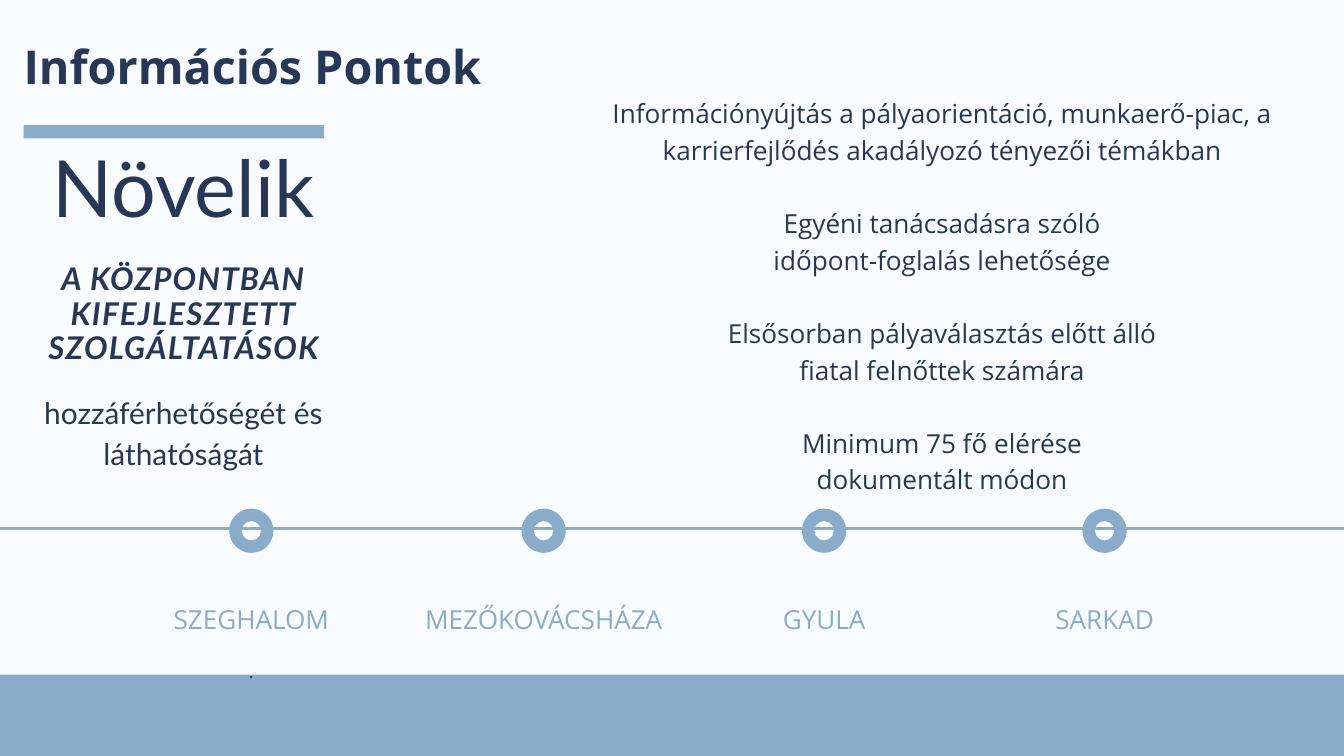
"""Builds the slide on the information points and their four towns."""
from dataclasses import dataclass

from lxml import etree
from pptx import Presentation
from pptx import util as u
from pptx.dml.color import RGBColor
from pptx.enum import shapes, text
from pptx.oxml.ns import qn


@dataclass(frozen=True)
class Style:
    font: str
    size: float
    leading: float
    color: RGBColor
    bold: bool = False
    italic: bool = False
    tracking: int = 0


class Theme:
    paper = RGBColor.from_string("F9FCFF")
    blue = RGBColor.from_string("8AABCA")
    navy = RGBColor.from_string("273755")
    title = Style("Open Sans", 50, 70, navy, bold=True)
    body = Style("Open Sans", 28, 39.2, navy)
    town = Style("Open Sans", 28, 39.2, blue)
    dot = Style("Open Sans", 19, 26.6, navy)
    verb = Style("Lato", 84.5, 84.5, navy)
    services = Style("Lato", 33.5, 36.8, navy, bold=True, italic=True, tracking=140)
    goal = Style("Lato", 32, 44.8, navy)


SERVICES = [
    ("Információnyújtás a pályaorientáció, munkaerő-piac, a",
     "karrierfejlődés akadályozó tényezői témákban"),
    ("Egyéni tanácsadásra szóló", "időpont-foglalás lehetősége"),
    ("Elsősorban pályaválasztás előtt álló", "fiatal felnőttek számára"),
    ("Minimum 75 fő elérése", "dokumentált módon"),
]
TOWNS = [("SZEGHALOM", 9.5), ("MEZŐKOVÁCSHÁZA", 20.55),
         ("GYULA", 31.15), ("SARKAD", 41.75)]
SIDE_TEXTS = [
    ("Növelik", Theme.verb, 5.84, 3.02),
    ("A KÖZPONTBAN KIFEJLESZTETT SZOLGÁLTATÁSOK", Theme.services, 9.93, 3.89),
    ("hozzáférhetőségét és láthatóságát", Theme.goal, 14.68, 3.02),
]
WIDTH, HEIGHT = 50.8, 28.58
TIMELINE_Y = 19.98
RING = 1.67


def box(*lengths):
    """Turn centimetre numbers into lengths."""
    return [u.Cm(length) for length in lengths]


def prepare_frame(frame):
    """Give a text frame no margins, wrapping and top alignment."""
    frame.margin_left = frame.margin_top = frame.margin_right = frame.margin_bottom = 0
    frame.word_wrap = True
    frame.auto_size = text.MSO_AUTO_SIZE.NONE
    frame.vertical_anchor = text.MSO_ANCHOR.TOP


def format_paragraph(paragraph, style, align=text.PP_ALIGN.CENTER, before=0):
    """Apply a theme style to a paragraph."""
    paragraph.alignment = align
    paragraph.line_spacing = u.Pt(style.leading)
    paragraph.space_before = u.Pt(before)
    font = paragraph.font
    font.name, font.size = style.font, u.Pt(style.size)
    font.bold, font.italic = style.bold, style.italic
    font.color.rgb = style.color
    if style.tracking:
        font._rPr.set("spc", str(style.tracking))


def add_label(slide, wording, style, left, top, width, height):
    """Add a centred text box."""
    frame = slide.shapes.add_textbox(*box(left, top, width, height)).text_frame
    prepare_frame(frame)
    frame.text = wording
    format_paragraph(frame.paragraphs[0], style)


def add_block(slide, preset, left, top, width, height):
    """Add a flat blue shape without outline."""
    block = slide.shapes.add_shape(preset, *box(left, top, width, height))
    block.shadow.inherit = False
    block.fill.solid()
    block.fill.fore_color.rgb = Theme.blue
    block.line.fill.background()
    return block


def add_timeline(slide):
    """Add the line with a ring and a label for every town."""
    line = slide.shapes.add_connector(
        shapes.MSO_CONNECTOR.STRAIGHT, *box(0, TIMELINE_Y, WIDTH, TIMELINE_Y))
    line.line.color.rgb = Theme.blue
    line.line.width = u.Pt(3.6)
    etree.SubElement(line._element.spPr, qn("a:effectLst"))
    for town, center in TOWNS:
        add_label(slide, town, Theme.town, center - 5.3, 22.6, 10.6, 1.3)
        ring = add_block(slide, shapes.MSO_SHAPE.DONUT,
                         center - RING / 2, 19.23, RING, RING)
        ring.adjustments[0] = 0.28
    add_label(slide, ".", Theme.dot, TOWNS[0][1] - 5.03, 24.84, 10.06, 0.86)


def fill_title(title):
    """Place and write the slide title."""
    title.left, title.top, title.width, title.height = box(0.89, 1.07, 18.72, 2.34)
    prepare_frame(title.text_frame)
    title.text_frame.text = "Információs Pontok"
    format_paragraph(title.text_frame.paragraphs[0], Theme.title, text.PP_ALIGN.LEFT)


def fill_services(body):
    """Write the services as pairs of lines set apart by one line."""
    body.left, body.top, body.width, body.height = box(21.29, 3.5, 28.63, 17.53)
    frame = body.text_frame
    prepare_frame(frame)
    frame.text = "\n".join(line for service in SERVICES for line in service)
    for index, paragraph in enumerate(frame.paragraphs):
        properties = paragraph._p.get_or_add_pPr()
        properties.set("marL", "0")
        properties.set("indent", "0")
        etree.SubElement(properties, qn("a:buNone"))
        starts_service = index > 0 and index % 2 == 0
        format_paragraph(paragraph, Theme.body,
                         before=Theme.body.leading if starts_service else 0)


def main():
    """Build and save the slide."""
    deck = Presentation()
    deck.slide_width, deck.slide_height = box(WIDTH, HEIGHT)
    slide = deck.slides.add_slide(deck.slide_layouts[1])
    slide.background.fill.solid()
    slide.background.fill.fore_color.rgb = Theme.paper

    add_block(slide, shapes.MSO_SHAPE.RECTANGLE, 0, 25.5, WIDTH, HEIGHT - 25.5)
    add_timeline(slide)
    fill_title(slide.shapes.title)
    add_block(slide, shapes.MSO_SHAPE.RECTANGLE, 0.89, 4.72, 11.35, 0.51)
    fill_services(slide.placeholders[1])
    for wording, style, top, height in SIDE_TEXTS:
        add_label(slide, wording, style, -0.94, top, 15.75, height)
    deck.save("out.pptx")


if __name__ == "__main__":
    main()
